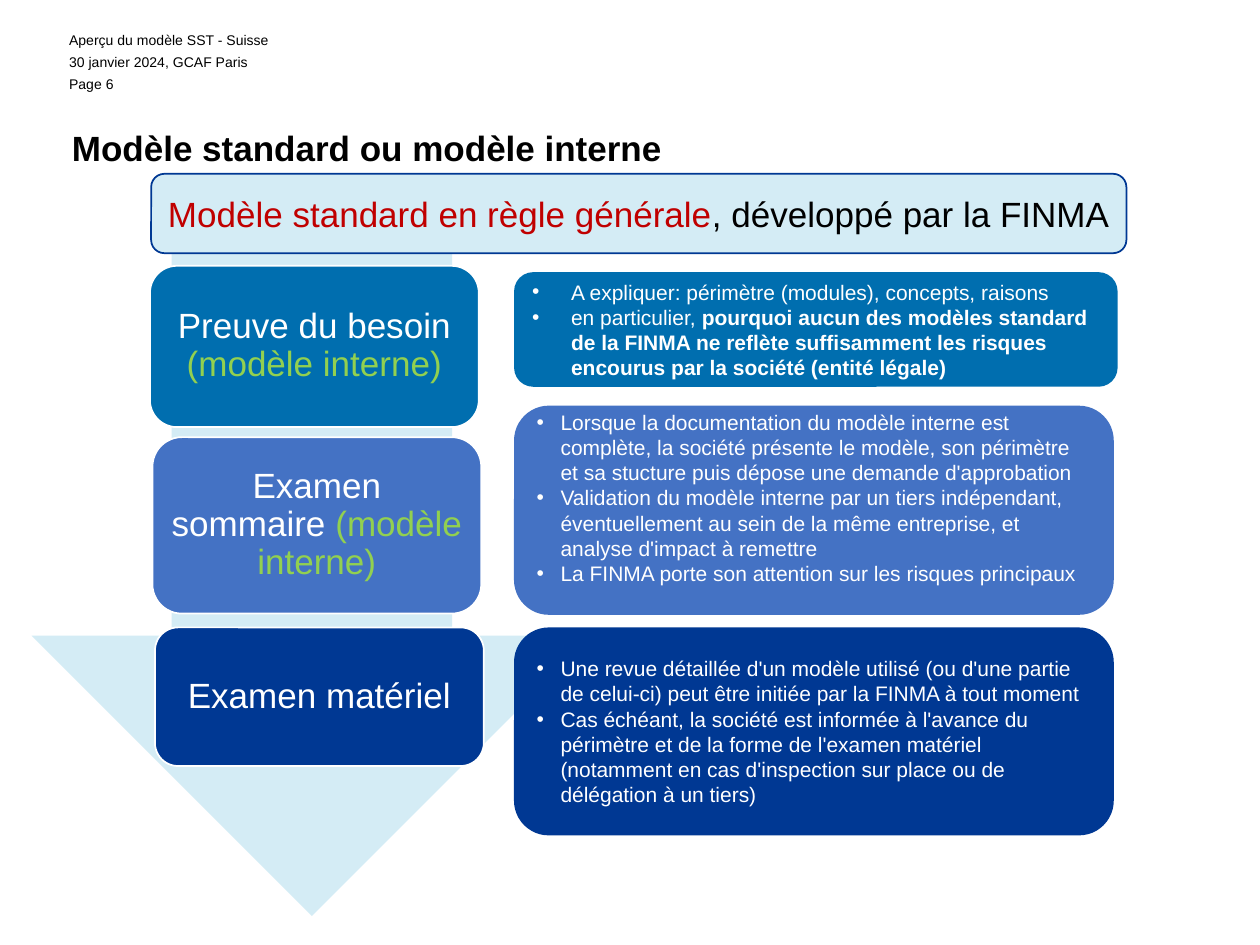
import pptx
import pptx.dml.color
import pptx.enum.shapes
import pptx.enum.text
import pptx.oxml
import pptx.oxml.ns
import pptx.util
from pptx.util import Inches

COLORS = {
    "black": "000000", "white": "FFFFFF", "pale": "D4ECF5", "teal": "006EAF",
    "blue": "4472C4", "navy": "003893", "green": "92D050", "red": "C00000",
}
SHAPE = pptx.enum.shapes.MSO_SHAPE
ALIGN = pptx.enum.text.PP_ALIGN
ANCHOR = pptx.enum.text.MSO_ANCHOR

HEADER_LINES = [
    ("Aperçu du modèle SST - Suisse", 6.73),
    ("30 janvier 2024, GCAF Paris", 2.79),
    ("Page 6", 1.61),
]
INTERNAL = ("(modèle interne)", {"color": "green"})
# Box, colour and runs of each step
STEPS = [
    ((1.19, 2.11, 2.61, 1.28), "teal", [("Preuve du besoin ", {}), INTERNAL]),
    ((1.21, 3.47, 2.61, 1.4), "blue", [("Examen sommaire ", {}), INTERNAL]),
    ((1.23, 4.98, 2.61, 1.1), "navy", [("Examen matériel", {})]),
]
# Box, colour, bullet indent, bottom margin and bullets of each detail panel
DETAILS = [
    ((4.08, 2.16, 4.79, 0.91), "teal", 0.31, 0.05, [
        [("A expliquer: périmètre (modules), concepts, raisons", {})],
        [("en particulier, ", {}),
         ("pourquoi aucun des modèles standard de la FINMA ne reflète suffisamment "
          "les risques encourus par la société (entité légale)", {"bold": True})],
    ]),
    ((4.08, 3.22, 4.76, 1.66), "blue", 0.19, 0.25, [
        [("Lorsque la documentation du modèle interne est complète, la société présente "
          "le modèle, son périmètre et sa stucture puis dépose une demande "
          "d'approbation", {})],
        [("Validation du modèle interne par un tiers indépendant, éventuellement au sein "
          "de la même entreprise, et analyse d'impact à remettre", {})],
        [("La FINMA porte son attention sur les risques principaux", {})],
    ]),
    ((4.08, 4.98, 4.76, 1.65), "navy", 0.19, 0.05, [
        [("Une revue détaillée d'un modèle utilisé (ou d'une partie de celui-ci) peut être "
          "initiée par la FINMA à tout moment", {})],
        [("Cas échéant, la société est informée à l'avance du périmètre et de la forme de "
          "l'examen matériel (notamment en cas d'inspection sur place ou de délégation à "
          "un tiers)", {})],
    ]),
]


def rgb(name):
    return pptx.dml.color.RGBColor.from_string(COLORS[name])


def set_attributes(target, values):
    for name, value in values.items():
        setattr(target, name, value)


def place(shape, box):
    names = ("left", "top", "width", "height")
    set_attributes(shape, dict(zip(names, map(Inches, box))))


def format_frame(frame, anchor, sides=0.1, top=0.05, bottom=0.05):
    set_attributes(frame, {
        "word_wrap": True, "auto_size": pptx.enum.text.MSO_AUTO_SIZE.NONE,
        "vertical_anchor": anchor,
        "margin_left": Inches(sides), "margin_right": Inches(sides),
        "margin_top": Inches(top), "margin_bottom": Inches(bottom),
    })


def add_runs(paragraph, runs, size, color, align=ALIGN.LEFT):
    """Fill a paragraph with (text, overrides) runs."""
    paragraph.alignment = align
    for text, overrides in runs:
        run = paragraph.add_run()
        run.text = text
        values = {"name": "Arial", "size": pptx.util.Pt(size), "bold": False}
        values.update(overrides)
        run.font.color.rgb = rgb(values.pop("color", color))
        set_attributes(run.font, values)


def add_bullet(paragraph, indent):
    properties = paragraph._p.get_or_add_pPr()
    properties.set("marL", str(Inches(indent)))
    properties.set("indent", str(-Inches(indent)))
    namespace = pptx.oxml.ns.nsdecls("a")
    for tag in ('buFont typeface="Arial"', 'buChar char="•"'):
        properties.append(pptx.oxml.parse_xml(f"<a:{tag} {namespace}/>"))


def add_block(slide, kind, box, fill, line=None):
    shape = slide.shapes.add_shape(kind, *map(Inches, box))
    shape.shadow.inherit = False
    shape.fill.solid()
    shape.fill.fore_color.rgb = rgb(fill)
    if line:
        shape.line.color.rgb = rgb(line)
        shape.line.width = pptx.util.Pt(1)
    else:
        shape.line.fill.background()
    return shape


def add_title(slide, box):
    title = slide.shapes.title
    place(title, box)
    format_frame(title.text_frame, ANCHOR.TOP, 0, 0, 0)
    runs = [("Modèle standard ou modèle interne", {"bold": True})]
    add_runs(title.text_frame.paragraphs[0], runs, 20, "black")


def add_header(slide, left, top, pitch):
    for index, (text, width) in enumerate(HEADER_LINES):
        box = (left, top + index * pitch, width, 0.24)
        frame = slide.shapes.add_textbox(*map(Inches, box)).text_frame
        format_frame(frame, ANCHOR.TOP)
        add_runs(frame.paragraphs[0], [(text, {})], 8, "black")


def add_arrow(slide, box):
    """Place an arrow pointing down; the box is the one before rotation."""
    add_block(slide, SHAPE.RIGHT_ARROW, box, "pale").rotation = 90


def add_step(slide, box, fill, runs):
    shape = add_block(slide, SHAPE.ROUNDED_RECTANGLE, box, fill, "white")
    format_frame(shape.text_frame, ANCHOR.MIDDLE, 0.08, 0.08, 0.08)
    paragraph = shape.text_frame.paragraphs[0]
    paragraph.line_spacing = 0.9
    add_runs(paragraph, runs, 20, "white", ALIGN.CENTER)


def add_detail(slide, box, fill, indent, bottom, bullets):
    shape = add_block(slide, SHAPE.ROUNDED_RECTANGLE, box, fill)
    frame = shape.text_frame
    format_frame(frame, ANCHOR.MIDDLE, bottom=bottom)
    for index, runs in enumerate(bullets):
        paragraph = frame.add_paragraph() if index else frame.paragraphs[0]
        add_bullet(paragraph, indent)
        add_runs(paragraph, runs, 12, "white")


def add_banner(slide, box):
    shape = add_block(slide, SHAPE.ROUNDED_RECTANGLE, box, "pale", "navy")
    format_frame(shape.text_frame, ANCHOR.MIDDLE, 0.05)
    runs = [("Modèle standard en règle générale", {"color": "red"}),
            (", développé par la FINMA", {})]
    add_runs(shape.text_frame.paragraphs[0], runs, 20, "black", ALIGN.CENTER)


def main():
    presentation = pptx.Presentation()
    presentation.slide_width = Inches(10)
    presentation.slide_height = Inches(7.5)
    slide = presentation.slides.add_slide(presentation.slide_layouts[5])
    add_title(slide, (0.57, 1, 8.86, 0.98))
    add_header(slide, 0.45, 0.2, 0.175)
    add_arrow(slide, (-0.42, 2.15, 5.79, 4.45))
    for step in STEPS:
        add_step(slide, *step)
    for detail in DETAILS:
        add_detail(slide, *detail)
    add_banner(slide, (1.2, 1.38, 7.74, 0.63))
    presentation.save("out.pptx")


if __name__ == "__main__":
    main()
